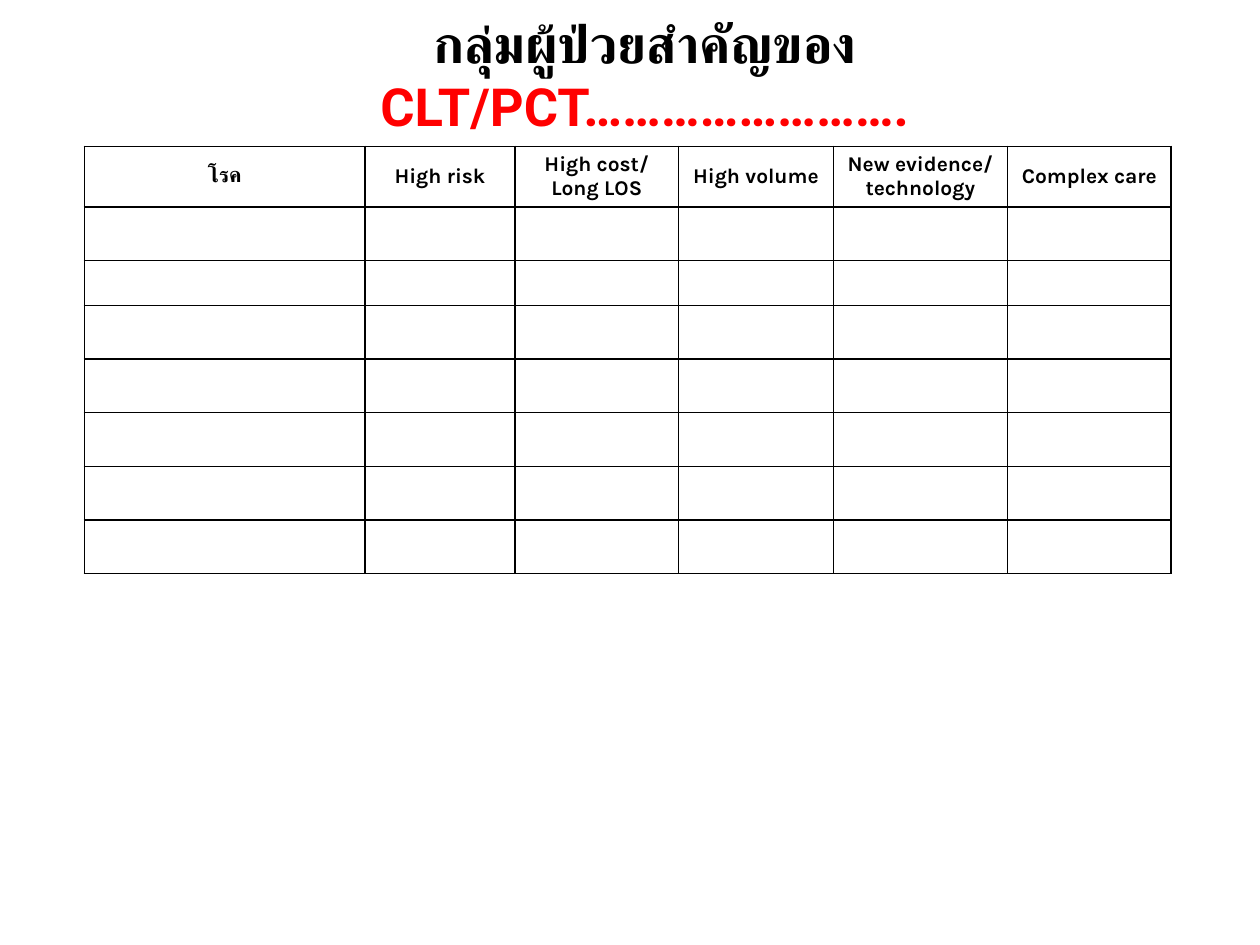
from dataclasses import dataclass

from lxml import etree
from pptx import Presentation
from pptx.dml.color import RGBColor
from pptx.enum.text import MSO_ANCHOR, MSO_AUTO_SIZE, PP_ALIGN
from pptx.oxml.ns import qn
from pptx.util import Cm, Pt

CENTER = PP_ALIGN.CENTER
MIDDLE = MSO_ANCHOR.MIDDLE
FIXED_SIZE = MSO_AUTO_SIZE.NONE
BLANK_LAYOUT = 6

HEADINGS = [
    "โรค",
    "High risk",
    "High cost/\nLong LOS",
    "High volume",
    "New evidence/\ntechnology",
    "Complex care",
]
COLUMN_WIDTHS = [5.66, 3.02, 3.3, 3.12, 3.51, 3.3]
ROW_HEIGHTS = [1.22, 1.08, 0.91] + [1.08] * 5


@dataclass(frozen=True)
class Theme:
    ink: str = "000000"
    accent: str = "FF0000"
    title_font: str = "Roboto"
    table_font: str = "Karla"
    title_size: int = 30
    table_size: int = 12
    border_width: int = 1


class SlideBuilder:
    def __init__(self, slide, theme):
        self.slide = slide
        self.theme = theme

    def add_run(self, paragraph, text, font_name, size, color):
        run = paragraph.add_run()
        run.text = text
        font_format = {"name": font_name, "size": Pt(size), "bold": True}
        for name, value in font_format.items():
            setattr(run.font, name, value)
        run.font.color.rgb = RGBColor.from_string(color)

    def add_title(self, parts, left, top, width, height):
        """Add one centred paragraph made of (text, colour) parts."""
        box = self.slide.shapes.add_textbox(Cm(left), Cm(top), Cm(width), Cm(height))
        frame = box.text_frame
        frame_format = {
            "word_wrap": True,
            "auto_size": FIXED_SIZE,
            "vertical_anchor": MIDDLE,
            "margin_left": Cm(0.18),
            "margin_right": Cm(0.18),
            "margin_top": Cm(0.1),
            "margin_bottom": Cm(0.1),
        }
        for name, value in frame_format.items():
            setattr(frame, name, value)
        paragraph = frame.paragraphs[0]
        paragraph.alignment = CENTER
        for text, color in parts:
            self.add_run(paragraph, text, self.theme.title_font, self.theme.title_size, color)

    def add_cell_borders(self, cell):
        properties = cell._tc.get_or_add_tcPr()
        width = str(Pt(self.theme.border_width))
        for position, side in enumerate(("a:lnL", "a:lnR", "a:lnT", "a:lnB")):
            line = etree.Element(qn(side), w=width)
            fill = etree.SubElement(line, qn("a:solidFill"))
            etree.SubElement(fill, qn("a:srgbClr"), val=self.theme.ink)
            properties.insert(position, line)

    def add_table(self, headings, column_widths, row_heights, left, top):
        """Add a ruled table with headings and empty rows to fill in."""
        table = self.slide.shapes.add_table(
            len(row_heights), len(column_widths), Cm(left), Cm(top),
            Cm(sum(column_widths)), Cm(sum(row_heights)),
        ).table
        table.first_row = table.horz_banding = False
        for column, width in zip(table.columns, column_widths):
            column.width = Cm(width)
        for row, height in zip(table.rows, row_heights):
            row.height = Cm(height)
        cell_format = {
            "vertical_anchor": MIDDLE,
            "margin_left": Cm(0.15),
            "margin_right": Cm(0.15),
            "margin_top": 0,
            "margin_bottom": 0,
        }
        for cell in table.iter_cells():
            for name, value in cell_format.items():
                setattr(cell, name, value)
            cell.fill.background()
            self.add_cell_borders(cell)
        for cell, heading in zip(table.rows[0].cells, headings):
            frame = cell.text_frame
            for index, text in enumerate(heading.split("\n")):
                paragraph = frame.add_paragraph() if index else frame.paragraphs[0]
                paragraph.alignment = CENTER
                self.add_run(paragraph, text, self.theme.table_font,
                             self.theme.table_size, self.theme.ink)


def main():
    presentation = Presentation()
    presentation.slide_width = Cm(25.4)
    presentation.slide_height = Cm(19.05)
    slide = presentation.slides.add_slide(presentation.slide_layouts[BLANK_LAYOUT])
    theme = Theme()
    builder = SlideBuilder(slide, theme)
    builder.add_table(HEADINGS, COLUMN_WIDTHS, ROW_HEIGHTS, left=1.7, top=2.95)
    title_parts = [
        ("กลุ่มผู้ป่วยสำคัญของ ", theme.ink),
        ("CLT/PCT…………………….", theme.accent),
    ]
    builder.add_title(title_parts, left=5, top=0.76, width=16, height=1.47)
    presentation.save("out.pptx")


if __name__ == "__main__":
    main()
